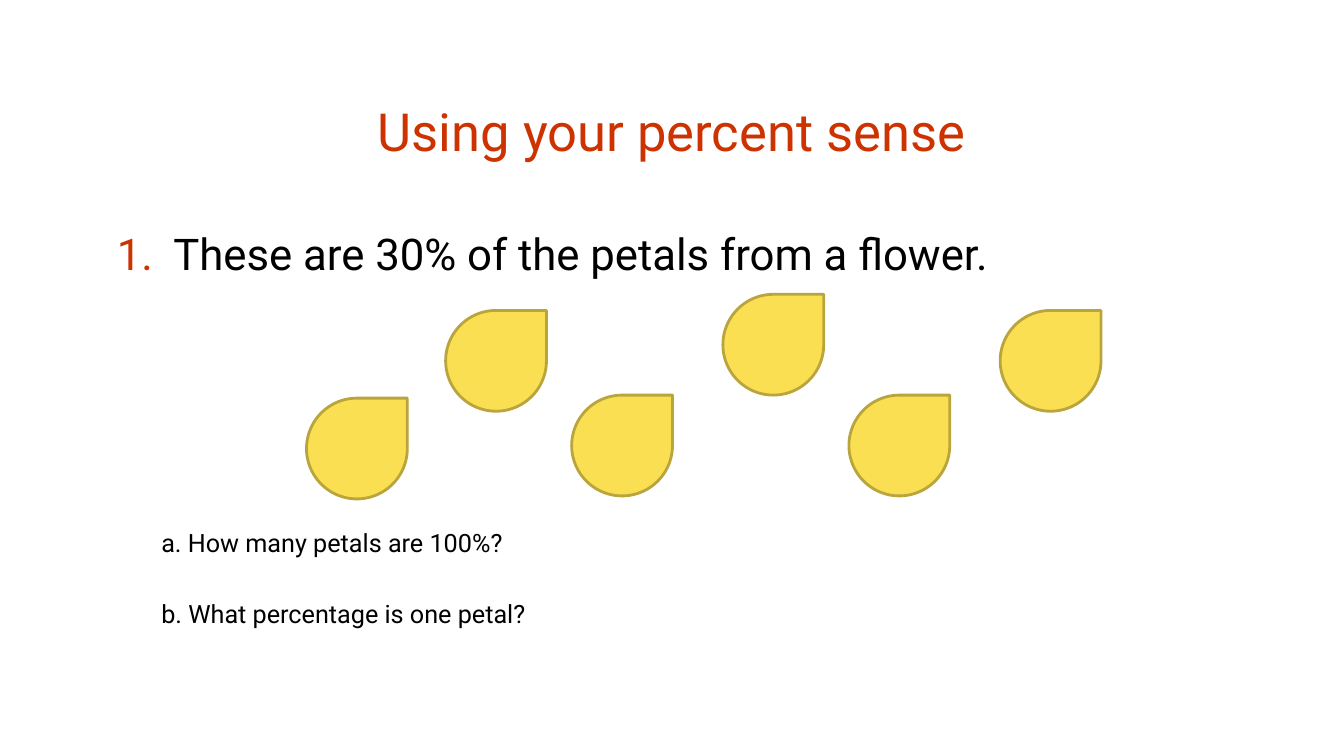
from lxml.etree import SubElement
from pptx import Presentation
from pptx.dml.color import RGBColor
from pptx.enum.shapes import MSO_SHAPE as Shape
from pptx.enum.text import MSO_ANCHOR as Anchor, MSO_AUTO_SIZE as AutoSize, PP_ALIGN as Align
from pptx.oxml.ns import qn
from pptx.util import Inches, Pt


def color(hex_code):
    return RGBColor.from_string(hex_code)


class PercentSlide:
    """Hold the lesson style and the slide, and add its elements."""

    FONT = "Roboto"
    ACCENT, INK = "CC3300", "000000"
    PETAL, PETAL_EDGE = "FBDF53", "BAA53D"

    def __init__(self, deck):
        self.slide = deck.slides.add_slide(deck.slide_layouts[5])

    def set_frame(self, frame, anchor):
        frame.word_wrap = True
        frame.auto_size = AutoSize.NONE
        frame.vertical_anchor = anchor
        frame.margin_left = frame.margin_right = Inches(0.16)
        frame.margin_top = frame.margin_bottom = Inches(0.08)

    def set_font(self, paragraph, size, hex_code):
        font = paragraph.font
        font.name, font.size = self.FONT, Pt(size)
        font.color.rgb = color(hex_code)

    def title(self, text, left, top, width, height):
        heading = self.slide.shapes.title
        heading.left, heading.top = Inches(left), Inches(top)
        heading.width, heading.height = Inches(width), Inches(height)
        frame = heading.text_frame
        self.set_frame(frame, Anchor.MIDDLE)
        frame.text = text
        frame.paragraphs[0].alignment = Align.CENTER
        self.set_font(frame.paragraphs[0], 37.5, self.ACCENT)

    def exercise(self, statement, questions, left, top, width, height):
        box = self.slide.shapes.add_textbox(
            Inches(left), Inches(top), Inches(width), Inches(height))
        frame = box.text_frame
        self.set_frame(frame, Anchor.TOP)
        lead = frame.paragraphs[0]
        lead.text = statement
        lead.space_before = Pt(3)
        self.number(lead, 0.56)
        self.set_font(lead, 31.2, self.INK)
        for text, gap in questions:
            question = frame.add_paragraph()
            question.text = text
            question.level = 1
            question.space_before = Pt(gap)
            question._p.get_or_add_pPr().set("marL", str(Inches(0.44)))
            self.set_font(question, 18, self.INK)

    def number(self, paragraph, indent):
        props = paragraph._p.get_or_add_pPr()
        props.set("marL", str(Inches(indent)))
        props.set("indent", str(-Inches(indent)))
        tint = SubElement(props, qn("a:buClr"))
        SubElement(tint, qn("a:srgbClr"), val=self.ACCENT)
        SubElement(props, qn("a:buFont"), typeface=self.FONT)
        SubElement(props, qn("a:buAutoNum"), type="arabicPeriod")

    def petal(self, left, top):
        petal = self.slide.shapes.add_shape(
            Shape.TEAR, Inches(left), Inches(top), Inches(1), Inches(1))
        petal.shadow.inherit = False
        petal.fill.solid()
        petal.fill.fore_color.rgb = color(self.PETAL)
        petal.line.color.rgb = color(self.PETAL_EDGE)
        petal.line.width = Pt(2)


def main():
    deck = Presentation()
    deck.slide_width, deck.slide_height = Inches(13.33), Inches(7.5)
    lesson = PercentSlide(deck)
    lesson.title("Using your percent sense", 1, 0.67, 11.33, 1.25)
    questions = [("a. How many petals are 100%?", 177),
                 ("b. What percentage is one petal?", 29.6)]
    lesson.exercise("These are 30% of the petals from a flower.", questions,
                    1, 2.17, 11.33, 4.96)
    petal_spots = [(3.04, 3.95), (4.42, 3.08), (5.67, 3.92),
                   (7.17, 2.92), (8.42, 3.92), (9.92, 3.08)]
    for left, top in petal_spots:
        lesson.petal(left, top)
    deck.save("out.pptx")


if __name__ == "__main__":
    main()
